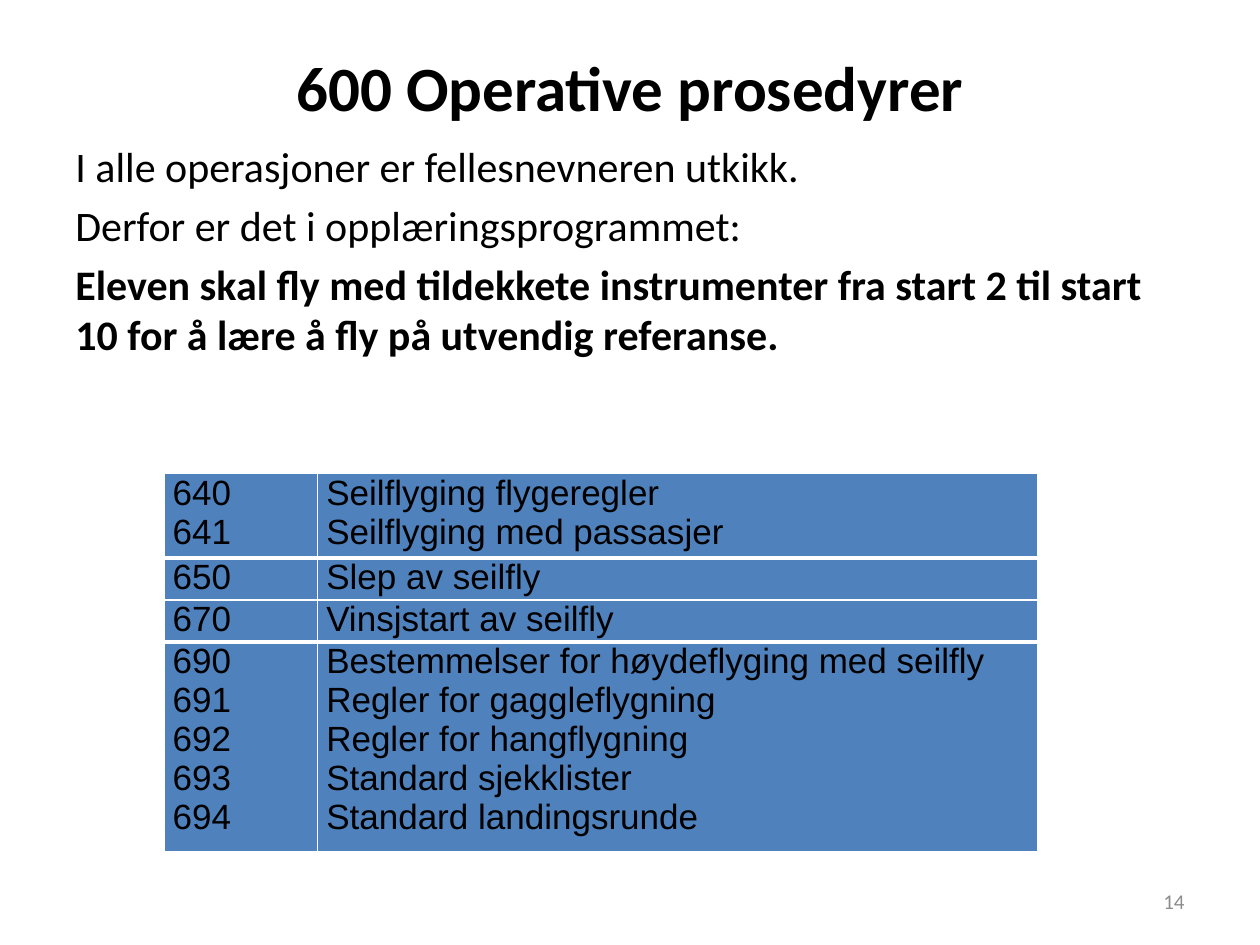
from dataclasses import dataclass

from lxml.etree import SubElement
from pptx import Presentation
from pptx.dml.color import RGBColor
from pptx.enum.text import MSO_ANCHOR, PP_ALIGN
from pptx.oxml.ns import qn
from pptx.util import Inches, Pt


@dataclass(frozen=True)
class Theme:
    """Colours, fonts and type sizes of the slide."""
    ink: str = "000000"
    muted: str = "8C8C8C"
    cell: str = "4F81BD"
    rule: str = "FFFFFF"
    text_font: str = "Calibri"
    table_font: str = "Arial"
    title_size: int = 36
    body_size: int = 24
    table_size: int = 20
    number_size: int = 12
    thin: int = 1
    thick: int = 3


class SlideBuilder:
    """Draws the elements of one slide in a given theme."""

    def __init__(self, slide, theme):
        self.slide = slide
        self.theme = theme

    def style(self, paragraph, size, bold=False, color=None, font=None):
        """Format every run of a paragraph."""
        for run in paragraph.runs:
            run.font.name = font or self.theme.text_font
            run.font.size = Pt(size)
            run.font.bold = bold
            run.font.color.rgb = RGBColor.from_string(color or self.theme.ink)

    def title(self, text, left, top, width, height):
        """Fill and place the title placeholder."""
        heading = self.slide.shapes.title
        heading.left, heading.top = Inches(left), Inches(top)
        heading.width, heading.height = Inches(width), Inches(height)
        frame = heading.text_frame
        frame.text = text
        frame.vertical_anchor = MSO_ANCHOR.MIDDLE
        frame.paragraphs[0].alignment = PP_ALIGN.CENTER
        self.style(frame.paragraphs[0], self.theme.title_size, bold=True)

    def text_box(self, text, left, top, width, height):
        """Add a wrapping text box and return its frame."""
        box = self.slide.shapes.add_textbox(
            Inches(left), Inches(top), Inches(width), Inches(height))
        box.text_frame.word_wrap = True
        box.text_frame.text = text
        return box.text_frame

    def body(self, lines, left, top, width, height):
        """Add the introduction, with its last paragraph in bold."""
        frame = self.text_box("\n".join(lines), left, top, width, height)
        for index, paragraph in enumerate(frame.paragraphs):
            if index:
                paragraph.space_before = Pt(0.2 * self.theme.body_size)
            self.style(paragraph, self.theme.body_size, bold=index == len(lines) - 1)

    def page_number(self, number, left, top, width, height):
        """Add the page number at the right."""
        frame = self.text_box(number, left, top, width, height)
        frame.vertical_anchor = MSO_ANCHOR.MIDDLE
        frame.paragraphs[0].alignment = PP_ALIGN.RIGHT
        self.style(frame.paragraphs[0], self.theme.number_size, color=self.theme.muted)

    def border(self, cell, side, weight):
        """Draw one side of a cell."""
        line = SubElement(cell._tc.get_or_add_tcPr(), qn(f"a:ln{side}"), w=str(Pt(weight)))
        fill = SubElement(line, qn("a:solidFill"))
        SubElement(fill, qn("a:srgbClr"), val=self.theme.rule)

    def cell(self, cell, lines, top_weight, bottom_weight):
        """Fill, border and format one table cell."""
        cell.text = "\n".join(lines)
        cell.margin_left = cell.margin_right = Inches(0.07)
        cell.margin_top = cell.margin_bottom = 0
        weights = {"L": self.theme.thin, "R": self.theme.thin,
                   "T": top_weight, "B": bottom_weight}
        for side, weight in weights.items():
            self.border(cell, side, weight)
        cell.fill.solid()
        cell.fill.fore_color.rgb = RGBColor.from_string(self.theme.cell)
        for paragraph in cell.text_frame.paragraphs:
            self.style(paragraph, self.theme.table_size, font=self.theme.table_font)

    def table(self, groups, left, top, widths, line_height):
        """Add a table whose groups of several lines are set off by thick rules."""
        heights = [line_height * len(group) for group in groups]
        table = self.slide.shapes.add_table(
            len(groups), len(widths), Inches(left), Inches(top),
            Inches(sum(widths)), Inches(sum(heights))).table
        table.first_row = table.horz_banding = False
        for column, width in zip(table.columns, widths):
            column.width = Inches(width)
        rules = [self.theme.thin]
        for above, below in zip(groups, groups[1:]):
            single = len(above) == len(below) == 1
            rules.append(self.theme.thin if single else self.theme.thick)
        rules.append(self.theme.thin)
        for index, (group, height) in enumerate(zip(groups, heights)):
            table.rows[index].height = Inches(height)
            for column, lines in enumerate(zip(*group)):
                self.cell(table.cell(index, column), lines, rules[index], rules[index + 1])


INTRODUCTION = [
    "I alle operasjoner er fellesnevneren utkikk.",
    "Derfor er det i opplæringsprogrammet:",
    "Eleven skal fly med tildekkete instrumenter fra start 2 til start 10 "
    "for å lære å fly på utvendig referanse.",
]
PROCEDURES = [
    [("640", "Seilflyging flygeregler"), ("641", "Seilflyging med passasjer")],
    [("650", "Slep av seilfly")],
    [("670", "Vinsjstart av seilfly")],
    [("690", "Bestemmelser for høydeflyging med seilfly"),
     ("691", "Regler for gaggleflygning"),
     ("692", "Regler for hangflygning"),
     ("693", "Standard sjekklister"),
     ("694", "Standard landingsrunde")],
]


def main():
    """Build and save the slide."""
    presentation = Presentation()
    presentation.slide_width, presentation.slide_height = Inches(10), Inches(7.5)
    title_only = presentation.slide_layouts[5]
    builder = SlideBuilder(presentation.slides.add_slide(title_only), Theme())
    builder.title("600 Operative prosedyrer", 0.5, 0.3, 9, 0.77)
    builder.body(INTRODUCTION, 0.5, 1.07, 9, 5.63)
    builder.page_number("14", 7.17, 6.95, 2.33, 0.4)
    builder.table(PROCEDURES, 1.3, 3.76, [1.22, 5.72], 0.26)
    presentation.save("out.pptx")


if __name__ == "__main__":
    main()
